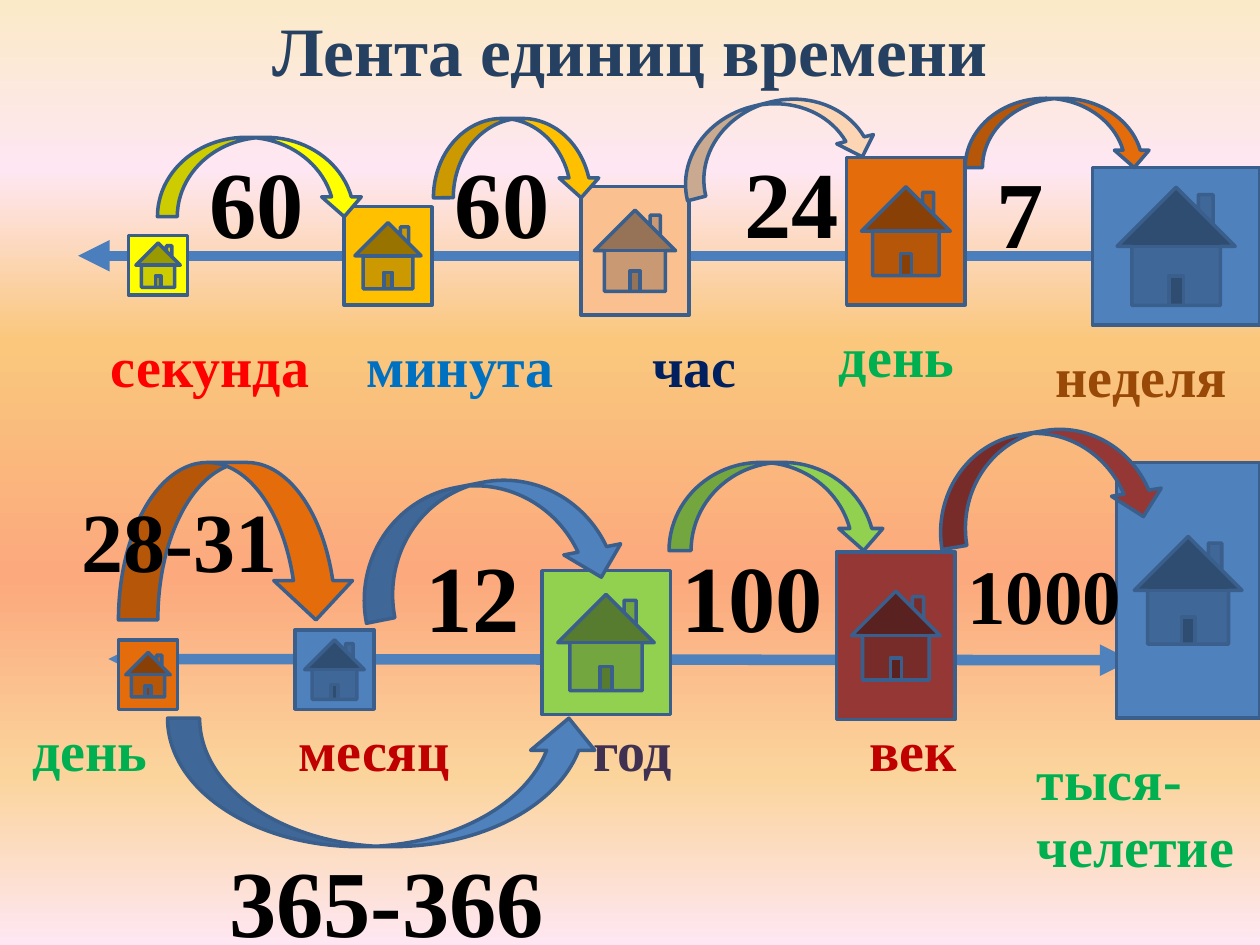
from copy import deepcopy

from lxml.etree import SubElement
from pptx import Presentation
from pptx.dml.color import RGBColor
from pptx.enum.shapes import MSO_CONNECTOR, MSO_SHAPE
from pptx.enum.text import MSO_ANCHOR, PP_ALIGN
from pptx.oxml.ns import qn
from pptx.util import Inches, Pt

FONT = "Times New Roman"
EDGE = "3A5F8C"
YELLOW, AMBER, PEACH, ORANGE = "FFFF00", "FFC000", "FAC090", "E46C0A"
BLUE, LIME, MAROON = "4F81BD", "92D050", "953735"
GREEN, RED, BLACK = "00B050", "C00000", "000000"
HOME = MSO_SHAPE.ACTION_BUTTON_HOME
DOWN = MSO_SHAPE.CURVED_DOWN_ARROW
UP = MSO_SHAPE.CURVED_UP_ARROW

STOPS = [(0, "FBEAC7"), (18, "FEE7F2"), (36, "FAC77D"),
         (61, "FBA97D"), (82, "FBD49C"), (100, "FEE7F2")]

AXES = [
    (0.62, 2.03, 9.84, 2.03, "4B7EBC"),
    (0.86, 5.23, 8.98, 5.24, BLUE),
]

# left, top, width, height, colour
HOUSES = [
    (1.02, 1.87, 0.47, 0.47, YELLOW),
    (2.73, 1.64, 0.7, 0.78, AMBER),
    (4.61, 1.48, 0.86, 1.02, PEACH),
    (6.72, 1.25, 0.94, 1.17, ORANGE),
    (8.67, 1.33, 1.33, 1.25, BLUE),
    (0.94, 5.08, 0.47, 0.55, ORANGE),
    (2.34, 5, 0.63, 0.63, BLUE),
    (4.3, 4.53, 1.02, 1.14, LIME),
    (6.64, 4.38, 0.94, 1.33, MAROON),
    (8.86, 3.67, 1.14, 2.03, BLUE),
]

# kind, left, top, width, height, colour, turn
JUMPS = [
    (DOWN, 1.25, 1.09, 1.64, 0.63, YELLOW, 0),
    (DOWN, 3.44, 0.94, 1.33, 0.63, AMBER, 0),
    (DOWN, 5.36, 0.81, 1.58, 0.6, "FCD5B5", 345.9),
    (DOWN, 7.66, 0.78, 1.48, 0.55, ORANGE, 0),
    (DOWN, 0.94, 3.67, 1.88, 1.25, ORANGE, 0),
    (DOWN, 2.8, 3.83, 2.13, 0.92, BLUE, 348.9),
    (DOWN, 5.31, 3.67, 1.72, 0.7, LIME, 0),
    (DOWN, 7.4, 3.42, 1.82, 0.8, MAROON, 350.7),
    (UP, 1.33, 5.7, 3.44, 1.02, BLUE, 0),
]

# text, left, top, width, height, colour
UNITS = [
    ("секунда", 0.78, 2.58, 1.88, 0.64, "FF0000"),
    ("минута", 2.81, 2.58, 1.88, 0.64, "0070C0"),
    ("час", 5.08, 2.58, 0.94, 0.64, "002060"),
    ("день", 6.56, 2.5, 1.95, 0.64, GREEN),
    ("неделя", 8.28, 2.66, 1.72, 0.64, "984807"),
    ("день", 0.16, 5.63, 1.91, 0.64, GREEN),
    ("месяц", 2.27, 5.63, 1.49, 0.64, RED),
    ("год", 4.61, 5.63, 1.25, 0.64, "403152"),
    ("век", 6.8, 5.63, 1.14, 0.64, RED),
    ("тыся-челетие", 8.13, 5.86, 1.87, 1.18, GREEN),
]

# text, left, top, width, height, size, alignment
COUNTS = [
    ("60", 1.41, 1.09, 1.25, 1.01, 54, PP_ALIGN.CENTER),
    ("60", 3.44, 1.09, 1.09, 1.01, 54, PP_ALIGN.CENTER),
    ("24", 5.63, 1.09, 1.31, 1.01, 54, PP_ALIGN.CENTER),
    ("7", 7.81, 1.17, 0.7, 1.01, 54, PP_ALIGN.LEFT),
    ("28-31", 0.55, 3.83, 2.34, 0.91, 48, PP_ALIGN.LEFT),
    ("12", 3.28, 4.22, 1.05, 1.01, 54, PP_ALIGN.LEFT),
    ("100", 5.31, 4.22, 1.41, 1.01, 54, PP_ALIGN.LEFT),
    ("1000", 7.58, 4.3, 1.64, 0.84, 44, PP_ALIGN.LEFT),
    ("365-366", 1.72, 6.64, 2.81, 1.01, 54, PP_ALIGN.LEFT),
]


def paint(color, tint):
    color.rgb = RGBColor.from_string(tint)


def add_sky(slide):
    """Fill the background with a top-to-bottom gradient."""
    fill = slide.background.fill
    fill.gradient()
    fill.gradient_angle = 270
    stops = fill.gradient_stops
    group = slide.background._cSld.find(".//" + qn("a:gsLst"))
    for _ in range(len(STOPS) - len(stops)):
        group.append(deepcopy(group[0]))
    for stop, (place, tint) in zip(fill.gradient_stops, STOPS):
        stop.position = place / 100
        paint(stop.color, tint)


def add_axis(slide, x1, y1, x2, y2, tint):
    axis = slide.shapes.add_connector(
        MSO_CONNECTOR.STRAIGHT, *map(Inches, (x1, y1, x2, y2)))
    axis.line.width = Pt(6)
    paint(axis.line.color, tint)
    line = axis.line._get_or_add_ln()
    for end in ("a:headEnd", "a:tailEnd"):
        SubElement(line, qn(end), type="triangle")
    SubElement(axis._element.spPr, qn("a:effectLst"))


def add_figure(slide, kind, box, tint, turn=0):
    figure = slide.shapes.add_shape(kind, *map(Inches, box))
    figure.shadow.inherit = False
    figure.rotation = turn
    figure.fill.solid()
    paint(figure.fill.fore_color, tint)
    paint(figure.line.color, EDGE)
    figure.line.width = Pt(2)


def add_text(slide, text, box, size, tint,
             align=PP_ALIGN.LEFT, anchor=MSO_ANCHOR.TOP):
    frame = slide.shapes.add_textbox(*map(Inches, box)).text_frame
    frame.word_wrap = True
    frame.vertical_anchor = anchor
    line = frame.paragraphs[0]
    line.text = text
    line.alignment = align
    line.font.name = FONT
    line.font.size = Pt(size)
    line.font.bold = True
    paint(line.font.color, tint)


def main():
    deck = Presentation()
    deck.slide_width, deck.slide_height = Inches(10), Inches(7.5)
    slide = deck.slides.add_slide(deck.slide_layouts[6])
    add_sky(slide)
    add_text(slide, "Лента единиц времени", (0.75, 0, 8.5, 0.78), 39.6,
             "254061", PP_ALIGN.CENTER, MSO_ANCHOR.MIDDLE)
    for axis in AXES:
        add_axis(slide, *axis)
    for *box, tint in HOUSES:
        add_figure(slide, HOME, box, tint)
    for kind, *box, tint, turn in JUMPS:
        add_figure(slide, kind, box, tint, turn)
    for text, *box, tint in UNITS:
        add_text(slide, text, box, 32, tint)
    for text, *box, size, align in COUNTS:
        add_text(slide, text, box, size, BLACK, align)
    deck.save("out.pptx")


if __name__ == "__main__":
    main()
